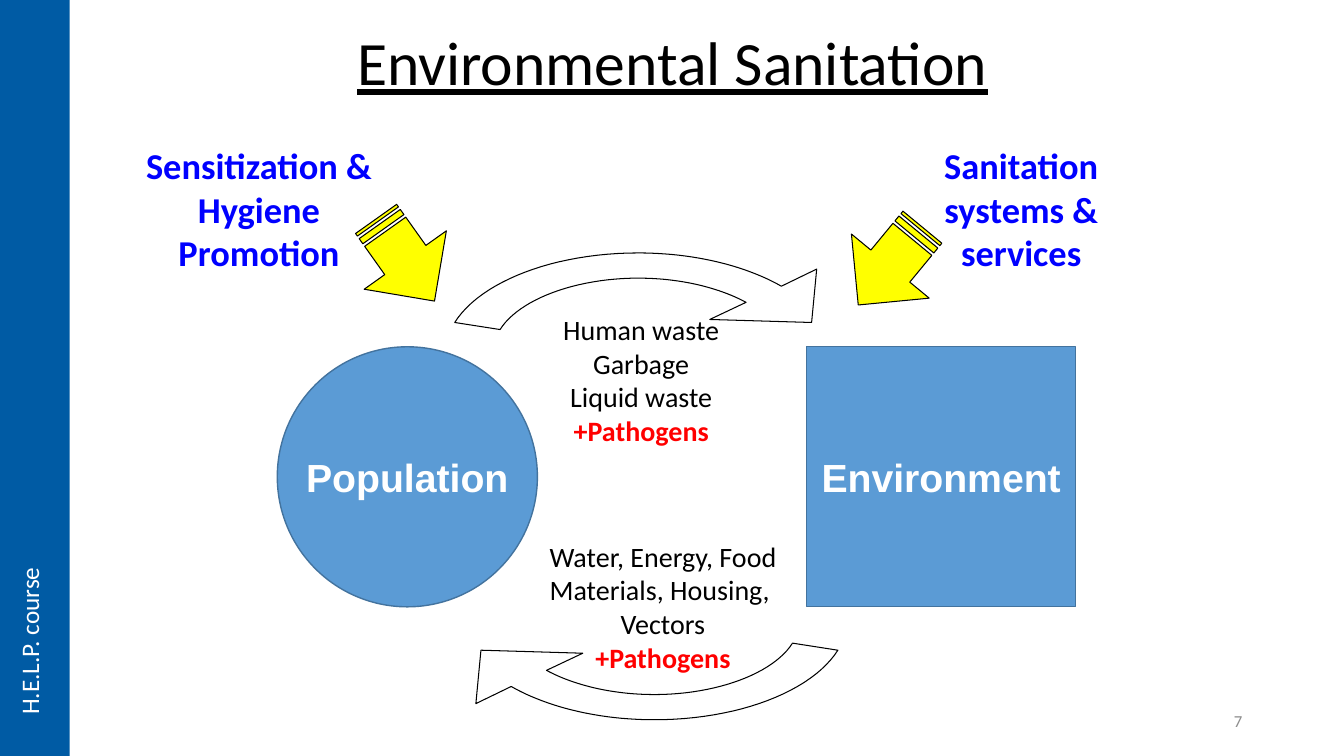
from pptx import Presentation
from pptx.dml.color import RGBColor
from pptx.enum.shapes import MSO_SHAPE as Preset
from pptx.enum.text import MSO_ANCHOR as Anchor, PP_ALIGN as Align
from pptx.util import Inches, Pt

COLOURS = {
    "bar": "005BA4", "label": "0000FF", "arrow": "FFFF00", "text": "000000",
    "alert": "FF0000", "node": "5B9BD5", "node line": "43739E",
    "white": "FFFFFF", "number": "8C8C8C",
}
# Curved arrow, relative to its top left corner; six numbers make a Bézier curve
ARC_START = (2.89, 0.49)
ARC_STEPS = [
    (2.61, 0.34, 2.23, 0.25, 1.82, 0.25), (1.2, 0.25, 0.64, 0.46, 0.45, 0.76),
    (0, 0.69), (0.26, 0.28, 0.99, 0, 1.82, 0), (2.36, 0, 2.87, 0.12, 3.24, 0.33),
    (3.59, 0.16), (3.54, 0.69), (2.53, 0.66),
]
CURVE_PARTS = 24


def colour(name):
    return RGBColor.from_string(COLOURS[name])


def write(frame, lines, size, tint="text", font="Calibri", bold=False,
          align=Align.CENTER, anchor=Anchor.TOP, wrap=True):
    """Fill a text frame; lines that start with + stand out as alerts."""
    frame.word_wrap = wrap
    frame.vertical_anchor = anchor
    for index, line in enumerate(lines):
        para = frame.add_paragraph() if index else frame.paragraphs[0]
        para.alignment = align
        run = para.add_run()
        run.text = line
        alert = line.startswith("+")
        run.font.name, run.font.size = font, Pt(size)
        run.font.bold = bold or alert
        run.font.color.rgb = colour("alert" if alert else tint)
    return frame


def add_text(page, box, lines, size, **style):
    area = page.shapes.add_textbox(*map(Inches, box))
    return write(area.text_frame, lines, size, **style)


def paint(shape, fill, line=None, width=0.75):
    shape.shadow.inherit = False
    if fill:
        shape.fill.solid()
        shape.fill.fore_color.rgb = colour(fill)
    else:
        shape.fill.background()
    if line:
        shape.line.color.rgb = colour(line)
        shape.line.width = Pt(width)
    else:
        shape.line.fill.background()


def add_shape(page, preset, box, fill, line=None, width=0.75):
    shape = page.shapes.add_shape(preset, *map(Inches, box))
    paint(shape, fill, line, width)
    return shape


def add_side_bar(page, box):
    left, top, width, height = box
    add_shape(page, Preset.RECTANGLE, box, "bar")
    frame = add_text(page, (left + 0.09, top + height - 1.89, width - 0.19, 1.58),
                     ["H.E.L.P. course"], 18, tint="white", align=Align.LEFT, wrap=False)
    frame._txBody.bodyPr.set("vert", "vert270")


def add_title(page, box):
    title = page.shapes.title
    title.left, title.top, title.width, title.height = map(Inches, box)
    frame = write(title.text_frame, ["Environmental Sanitation"], 44, anchor=Anchor.MIDDLE)
    frame.paragraphs[0].line_spacing = 0.9
    frame.paragraphs[0].runs[0].font.underline = True


def add_measure(page, box, text, arrow_at, angle):
    """A blue label with the striped arrow that leads from it."""
    left, top = box[:2]
    add_text(page, box, [text], 26, tint="label", bold=True)
    arrow = add_shape(page, Preset.STRIPED_RIGHT_ARROW,
                      (left + arrow_at[0], top + arrow_at[1], 1, 1), "arrow", "text")
    arrow.rotation = angle


def add_node(page, preset, box, name):
    node = add_shape(page, preset, box, "node", "node line", 1)
    write(node.text_frame, [name], 28, tint="white", font="Arial", bold=True,
          anchor=Anchor.MIDDLE, wrap=False)


def curve_points(start, step):
    knots = [start, step[:2], step[2:4], step[4:]]
    for part in range(1, CURVE_PARTS + 1):
        t = part / CURVE_PARTS
        weights = ((1 - t) ** 3, 3 * t * (1 - t) ** 2, 3 * t * t * (1 - t), t ** 3)
        yield tuple(sum(w * knot[axis] for w, knot in zip(weights, knots)) for axis in (0, 1))


def add_flow(page, arc_at, angle, text_box, lines):
    """A curved arrow between the nodes and the list of what it carries."""
    points = [ARC_START]
    for step in ARC_STEPS:
        points += [step] if len(step) == 2 else curve_points(points[-1], step)
    corners = [(Inches(x), Inches(y)) for x, y in points]
    builder = page.shapes.build_freeform(*corners[0])
    builder.add_line_segments(corners[1:], close=True)
    arc = builder.convert_to_shape(*map(Inches, arc_at))
    paint(arc, None, "text")
    arc.rotation = angle
    add_text(page, text_box, lines, 20, wrap=False)


def main():
    deck = Presentation()
    deck.slide_width, deck.slide_height = Inches(13.33), Inches(7.5)
    page = deck.slides.add_slide(deck.slide_layouts[5])

    # Frame of the page
    add_side_bar(page, (0, 0, 0.69, 7.5))
    add_title(page, (0.92, 0.2, 11.5, 0.91))

    # Measures
    add_measure(page, (1.27, 1.37, 2.6, 1.42), "Sensitization & Hygiene Promotion",
                (2.25, 0.71), 54.6)
    add_measure(page, (8.83, 1.37, 2.6, 1.42), "Sanitation systems & services",
                (-0.5, 0.77), 129.5)

    # Flows between population and environment
    add_flow(page, (4.51, 2.51), 0, (5.48, 3.05, 1.76, 1.45),
             ["Human waste", "Garbage", "Liquid waste", "+Pathogens"])
    add_flow(page, (4.72, 6.38), 180, (5.34, 5.3, 2.47, 1.45),
             ["Water, Energy, Food", "Materials, Housing, ", "Vectors", "+Pathogens"])

    # Nodes
    add_node(page, Preset.OVAL, (2.75, 3.44, 2.58, 2.58), "Population")
    add_node(page, Preset.RECTANGLE, (8, 3.44, 2.67, 2.58), "Environment")

    # Page number
    add_text(page, (9.42, 6.95, 3, 0.4), ["7"], 12, tint="number",
             align=Align.RIGHT, anchor=Anchor.MIDDLE)
    deck.save("out.pptx")


if __name__ == "__main__":
    main()
